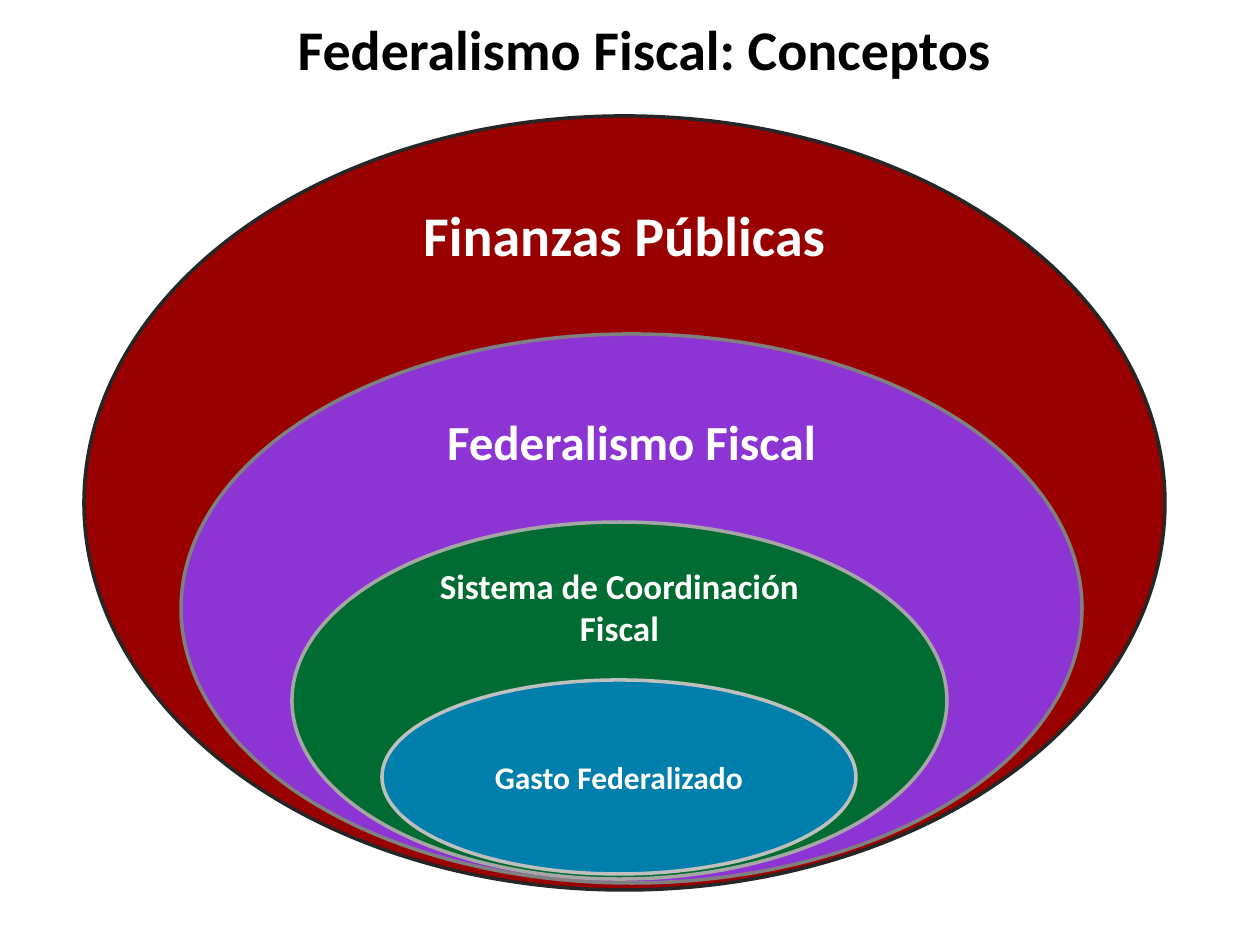
import pptx
import pptx.dml.color
import pptx.enum.shapes
import pptx.enum.text
import pptx.util

PX = 914400 // 126


def rgb(value):
    return pptx.dml.color.RGBColor.from_string(value)


def write(sp, text, size, color):
    tf = sp.text_frame
    tf.word_wrap = True
    tf.vertical_anchor = pptx.enum.text.MSO_ANCHOR.MIDDLE
    tf.text = text
    p = tf.paragraphs[0]
    p.alignment = pptx.enum.text.PP_ALIGN.CENTER
    font = p.runs[0].font
    font.name = "Calibri"
    font.size = pptx.util.Pt(size)
    font.bold = True
    font.color.rgb = rgb(color)
    return tf


prs = pptx.Presentation()
prs.slide_width = pptx.util.Inches(10)
prs.slide_height = pptx.util.Inches(7.5)
s = prs.slides.add_slide(prs.slide_layouts[6])

title = s.shapes.add_textbox(44 * PX, 0, 1201 * PX, 96 * PX)
write(title, "Federalismo Fiscal: Conceptos", 32, "000000")

ellipses = [
    ("Finanzas Públicas", 32, "990000", "262626", (84, 116, 1081, 774), 538),
    ("Federalismo Fiscal", 28, "8C34D4", "808080", (181, 334, 901, 549), 335),
    ("Sistema de Coordinación Fiscal", 20, "006C31", "A6A6A6", (292, 522, 655, 357), 188),
    ("Gasto Federalizado", 18, "007FAC", "BFBFBF", (382, 680, 474, 194), 0),
]
for text, size, fill, line, box, bottom in ellipses:
    sp = s.shapes.add_shape(
        pptx.enum.shapes.MSO_SHAPE.OVAL, *(value * PX for value in box)
    )
    sp.shadow.inherit = False
    sp.fill.solid()
    sp.fill.fore_color.rgb = rgb(fill)
    sp.line.color.rgb = rgb(line)
    sp.line.width = pptx.util.Pt(2)
    tf = write(sp, text, size, "FFFFFF")
    tf.margin_top = 0
    tf.margin_bottom = bottom * PX

prs.save("out.pptx")
